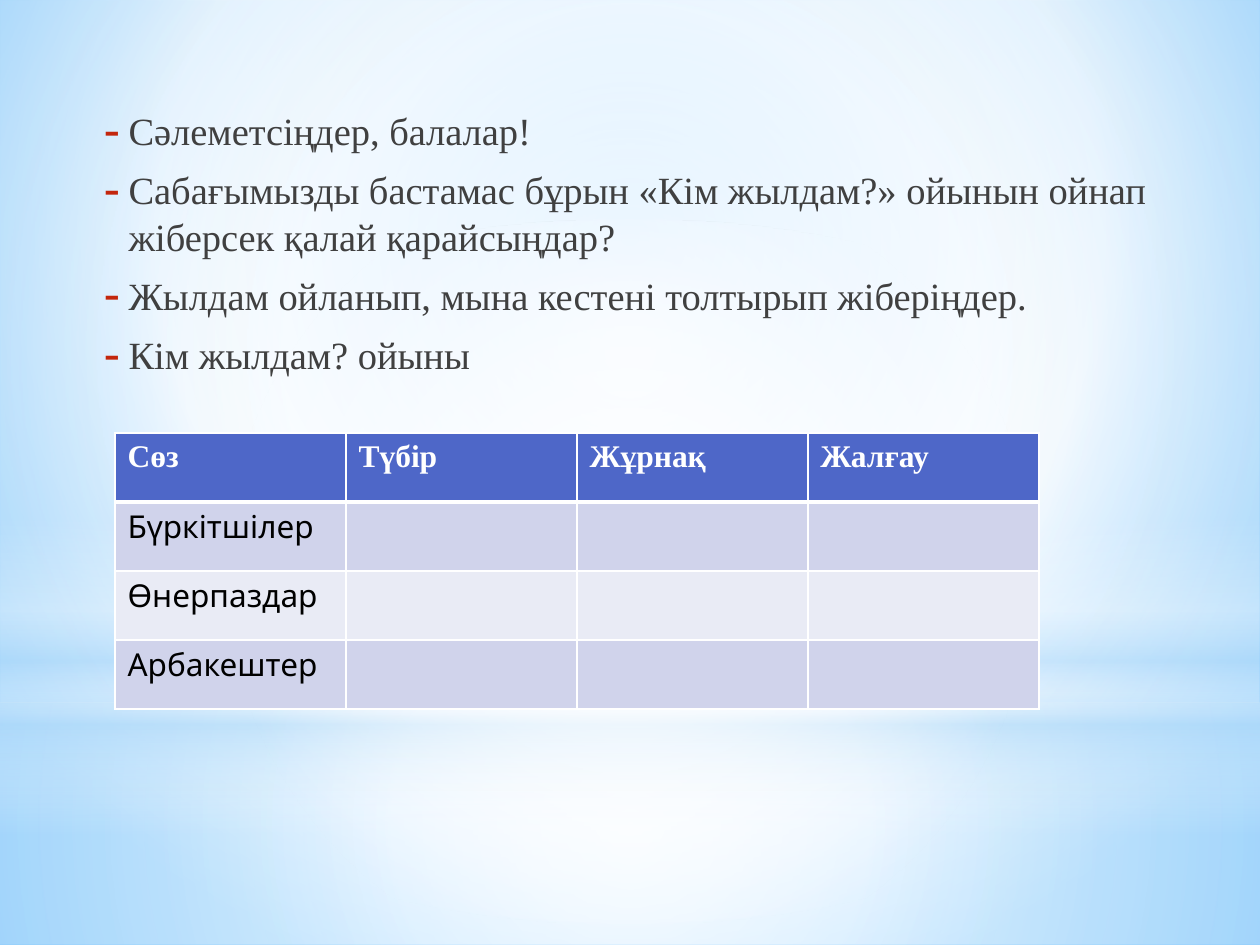
import pptx
import pptx.util
import pptx.oxml
import pptx.oxml.ns
import pptx.dml.color
import pptx.enum.shapes
import pptx.enum.text

SERIF = "Times New Roman"
LINES = [
    "Сәлеметсіңдер, балалар!",
    "Сабағымызды бастамас бұрын «Кім жылдам?» ойынын ойнап жіберсек қалай қарайсыңдар?",
    "Жылдам ойланып, мына кестені толтырып жіберіңдер.",
    "Кім жылдам? ойыны",
]
HEADS = ["Сөз", "Түбір", "Жұрнақ", "Жалғау"]
WORDS = ["Бүркітшілер", "Өнерпаздар", "Арбакештер"]

# Gradient stops: position %, colour, opacity %
BACK = [(0, "9ED5FF", 100), (60, "FFFFFF", 100), (100, "5BB9FF", 100)]
FLOOR = [(0, "FFFFFF", 91), (37, "FFFFFF", 76), (100, "B4DCFA", 79)]
SKY = [(0, "FFFFFF", 89), (48, "FFFFFF", 62), (100, "B4DCFA", 79)]
BAND = [(0, "FFFFFF", 0), (29, "FFFFFF", 30), (45, "B4DCFA", 40),
        (55, "FFFFFF", 26), (65, "B4DCFA", 60), (100, "FFFFFF", 0)]
GLOW = [(0, "FFFFFF", 100), (56, "FFFFFF", 0)]
MID = (50, 50, 50, 50)

# Kind, box in px, stops, centre (None for a vertical blend)
LAYERS = [
    ("RECTANGLE", (0, 703, 1260, 242), FLOOR, MID),
    ("RECTANGLE", (0, 0, 1260, 703), SKY, MID),
    ("RECTANGLE", (0, 519, 1260, 315), BAND, None),
    ("OVAL", (0, 220, 1260, 703), GLOW, MID),
]
BODY = (84, 101, 1121, 479)
LEFT, TOP, WIDE, HIGH = 115, 433, 231, 69

HEAD = dict(name=SERIF, size=pptx.util.Pt(18), bold=True)
WORD = dict(name="Cabin", size=pptx.util.Pt(18), bold=False)
TEXT = dict(name=SERIF, size=pptx.util.Pt(22))
NS = pptx.oxml.ns.nsdecls("a")
qn = pptx.oxml.ns.qn


def px(n):
    return pptx.util.Emu(round(n * 914400 / 126))


def rgb(code):
    return pptx.dml.color.RGBColor.from_string(code)


def style(font, form, code):
    for key, val in form.items():
        setattr(font, key, val)
    font.color.rgb = rgb(code)


def blend(fill, root, stops, mid):
    """Give a fill, held under root, the gradient with these stops."""
    fill.gradient()
    marks = "".join(
        f'<a:gs pos="{pos * 1000}"><a:srgbClr val="{code}">'
        f'<a:alpha val="{alpha * 1000}"/></a:srgbClr></a:gs>'
        for pos, code, alpha in stops)
    if mid:
        sides = " ".join(f'{side}="{n * 1000}"' for side, n in zip("ltrb", mid))
        way = f'<a:path path="circle"><a:fillToRect {sides}/></a:path>'
    else:
        way = '<a:lin ang="5400000" scaled="0"/>'
    old = root.find(".//" + qn("a:gradFill"))
    new = pptx.oxml.parse_xml(
        f'<a:gradFill {NS} rotWithShape="1"><a:gsLst>{marks}</a:gsLst>{way}</a:gradFill>')
    old.getparent().replace(old, new)


def border(cell, low):
    """White edges, 1 pt wide, with the bottom one low pt wide."""
    props = cell._tc.get_or_add_tcPr()
    for spot, (side, size) in enumerate(zip("LRTB", (1, 1, 1, low))):
        props.insert(spot, pptx.oxml.parse_xml(
            f'<a:ln{side} {NS} w="{size * 12700}"><a:solidFill>'
            f'<a:srgbClr val="FFFFFF"/></a:solidFill></a:ln{side}>'))


def bullet(par):
    props = par._p.get_or_add_pPr()
    props.set("marL", str(px(32)))
    props.set("indent", str(-px(25)))
    for part in ('<a:buClr {}><a:srgbClr val="C3260C"/></a:buClr>',
                 '<a:buSzPct {} val="130000"/>', '<a:buChar {} char="-"/>'):
        props.append(pptx.oxml.parse_xml(part.format(NS)))


def scene(slide):
    blend(slide.background.fill, slide._element, BACK, (20, 10, 20, 60))
    for kind, box, stops, mid in LAYERS:
        shape = slide.shapes.add_shape(
            getattr(pptx.enum.shapes.MSO_SHAPE, kind), *map(px, box))
        shape.shadow.inherit = False
        shape.line.fill.background()
        blend(shape.fill, shape._element, stops, mid)


def speech(slide, body):
    slide.shapes._spTree.append(body._element)
    body.left, body.top, body.width, body.height = map(px, BODY)
    frame = body.text_frame
    frame.text = "\n".join(LINES)
    frame.auto_size = pptx.enum.text.MSO_AUTO_SIZE.NONE
    for spot, par in enumerate(frame.paragraphs):
        bullet(par)
        par.space_before = pptx.util.Pt(4.4 if spot else 0)
        par.space_after = pptx.util.Pt(3)
        style(par.runs[0].font, TEXT, "404040")


def grid(slide):
    rows = [HEADS] + [[word] + [""] * (len(HEADS) - 1) for word in WORDS]
    tall, wide = len(rows), len(HEADS)
    table = slide.shapes.add_table(
        tall, wide, px(LEFT), px(TOP), px(WIDE * wide), px(HIGH * tall)).table
    for r, row in enumerate(rows):
        fill = ("D0D3EB" if r % 2 else "E9EBF5") if r else "4E67C8"
        for c, text in enumerate(row):
            cell = table.cell(r, c)
            cell.text = text
            cell.fill.solid()
            cell.fill.fore_color.rgb = rgb(fill)
            border(cell, 1 if r else 3)
            style(cell.text_frame.paragraphs[0].font,
                  WORD if r else HEAD, "000000" if r else "FFFFFF")
            for run in cell.text_frame.paragraphs[0].runs:
                style(run.font, WORD if r else HEAD, "000000" if r else "FFFFFF")


def main():
    deck = pptx.Presentation()
    deck.slide_width, deck.slide_height = px(1260), px(945)
    slide = deck.slides.add_slide(deck.slide_layouts[1])
    title, body = slide.placeholders
    title._element.getparent().remove(title._element)
    scene(slide)
    speech(slide, body)
    grid(slide)
    deck.save("out.pptx")


if __name__ == "__main__":
    main()
